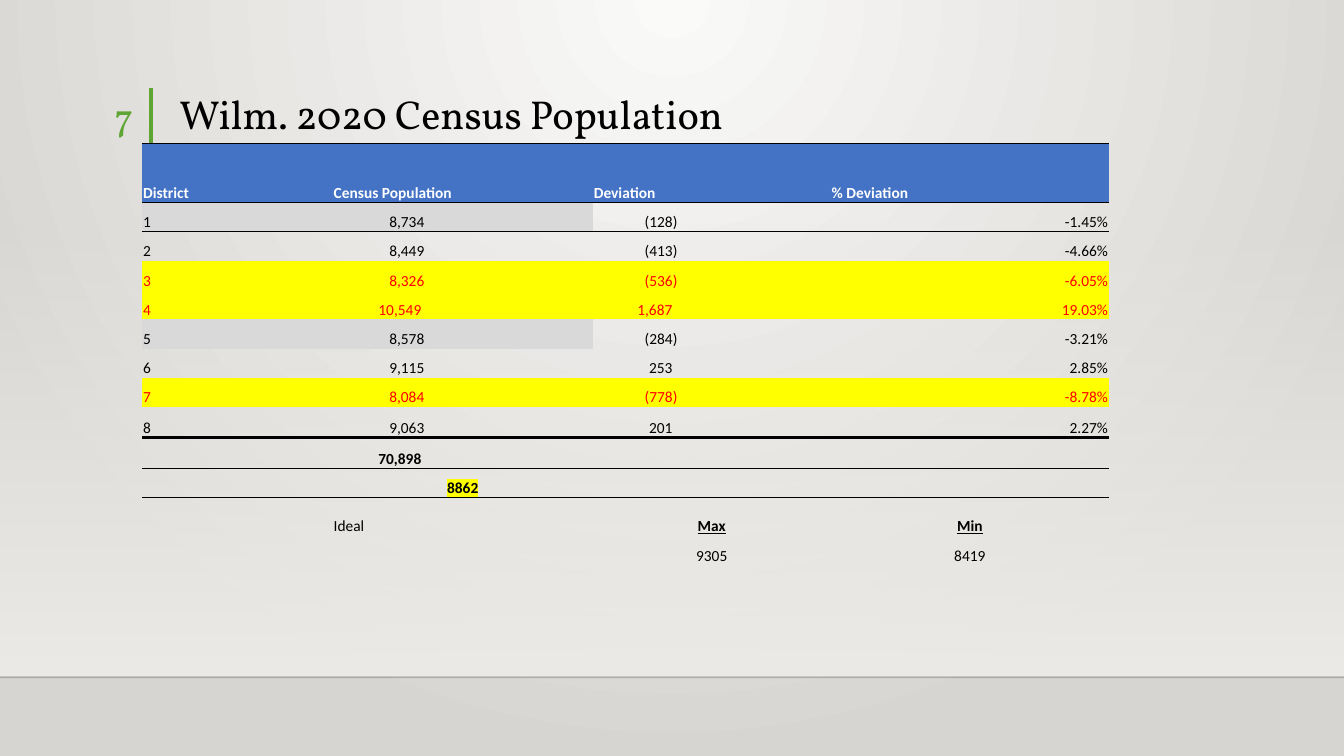
from lxml import etree
from pptx import Presentation
from pptx import util as u
from pptx.dml.color import RGBColor
from pptx.enum import shapes, text
from pptx.oxml import parse_xml
from pptx.oxml.ns import nsdecls, qn

# Content
TITLE = "Wilm. 2020 Census Population"
NUMBER = "7"
HEADER = ["District", "Census Population", "Deviation", "% Deviation"]
DISTRICTS = [
    ("1", "8,734", "(128)", "-1.45%"),
    ("2", "8,449", "(413)", "-4.66%"),
    ("3", "8,326", "(536)", "-6.05%"),
    ("4", "10,549", "1,687", "19.03%"),
    ("5", "8,578", "(284)", "-3.21%"),
    ("6", "9,115", "253", "2.85%"),
    ("7", "8,084", "(778)", "-8.78%"),
    ("8", "9,063", "201", "2.27%"),
]
SUMMARY = [
    ("", "70,898", "", ""),
    ("", "8862", "", ""),
    ("", "Ideal", "Max", "Min"),
    ("", "", "9305", "8419"),
]
OUTLIERS = {3, 4, 7}
SHADED = {1, 5}
RULES = {0: 1, 1: 1, 9: 2, 10: 1}  # row edge: line width in points

# Look
BLACK = RGBColor(0, 0, 0)
WHITE = RGBColor(255, 255, 255)
RED = RGBColor(255, 0, 0)
YELLOW = RGBColor(255, 255, 0)
BLUE = RGBColor(0x44, 0x72, 0xC4)
GREY = RGBColor(0xD9, 0xD9, 0xD9)
GREEN = RGBColor(0x5F, 0xA5, 0x34)
GLOW = RGBColor(0xFA, 0xFA, 0xF9)
STONE = RGBColor(0xD7, 0xD5, 0xD2)
SAND = RGBColor(0xED, 0xEB, 0xE7)
LEFT, CENTER, RIGHT = text.PP_ALIGN.LEFT, text.PP_ALIGN.CENTER, text.PP_ALIGN.RIGHT

# Grid, in inches
WIDTH, HEIGHT = 13.33, 7.5
COLUMNS = [1.89, 2.58, 2.36, 2.76]
ROWS = [0.59] + [0.29] * 7 + [0.3, 0.31, 0.29, 0.38, 0.29]
TABLE_LEFT, TABLE_TOP = 1.41, 1.42
FLOOR = 6.72


def write(frame, words, size=11, font="Calibri", color=BLACK, bold=False,
          underline=False, align=LEFT, highlight=None, spacing=None):
    para = frame.paragraphs[0]
    para.alignment = align
    if spacing:
        para.line_spacing = spacing
    if not words:
        end = etree.SubElement(para._p, qn("a:endParaRPr"))
        end.set("sz", str(size * 100))
        return
    span = para.add_run()
    span.text = words
    span.font.size, span.font.name = u.Pt(size), font
    span.font.bold, span.font.underline = bold, underline
    span.font.color.rgb = color
    if highlight:
        mark = parse_xml(f'<a:highlight {nsdecls("a")}><a:srgbClr val="{highlight}"/></a:highlight>')
        span.font._element.find(qn("a:solidFill")).addnext(mark)


def add_text(page, left, top, width, height, words, anchor, **style):
    box = page.shapes.add_textbox(*map(u.Inches, (left, top, width, height)))
    box.text_frame.word_wrap = True
    box.text_frame.vertical_anchor = anchor
    write(box.text_frame, words, font="Vollkorn", **style)


def set_gradient(fill, owner, start, end, direction, start_alpha=100):
    fill.gradient()
    old = owner.find(".//" + qn("a:gradFill"))
    new = parse_xml(
        f'<a:gradFill {nsdecls("a")} rotWithShape="1"><a:gsLst>'
        f'<a:gs pos="0"><a:srgbClr val="{start}"><a:alpha val="{start_alpha * 1000}"/></a:srgbClr></a:gs>'
        f'<a:gs pos="100000"><a:srgbClr val="{end}"/></a:gs></a:gsLst>{direction}</a:gradFill>')
    old.getparent().replace(old, new)


def add_line(page, start, end, color, width, alpha=100):
    line = page.shapes.add_connector(shapes.MSO_CONNECTOR.STRAIGHT, *map(u.Inches, start + end))
    line.line.color.rgb, line.line.width = color, u.Pt(width)
    etree.SubElement(line._element.spPr, qn("a:effectLst"))
    if alpha < 100:
        tint = line._element.spPr.find(".//" + qn("a:srgbClr"))
        etree.SubElement(tint, qn("a:alpha")).set("val", str(alpha * 1000))


def cell_format(row, column, words):
    """Return text format, fill colour and right margin of a table cell."""
    if row == 0:
        return dict(color=WHITE, bold=True), BLUE, 0.01
    if row > len(DISTRICTS):
        style = dict(bold=words in ("70,898", "8862", "Max", "Min"),
                     underline=words in ("Max", "Min"),
                     align=LEFT if words == "Ideal" else CENTER)
        if words == "8862":
            style["highlight"] = YELLOW
        if words == "70,898":
            return style | dict(align=RIGHT), None, 1.7
        return style, None, 0.01
    style = dict(color=RED if row in OUTLIERS else BLACK, align=RIGHT if column else LEFT)
    fill = YELLOW if row in OUTLIERS else GREY if row in SHADED and column < 2 else None
    margin = 0.01
    if column == 1:
        margin = 1.7 if len(words) > 5 else 1.67
    elif column == 2:
        margin = 1.52 if words.startswith("(") else 1.57
    return style, fill, margin


def add_rules(cell, row):
    for tag, edge in (("lnB", row + 1), ("lnT", row)):
        if edge in RULES:
            cell._tc.get_or_add_tcPr().insert(0, parse_xml(
                f'<a:{tag} {nsdecls("a")} w="{u.Pt(RULES[edge])}"><a:solidFill>'
                f'<a:srgbClr val="{BLACK}"/></a:solidFill></a:{tag}>'))


def add_population_table(page):
    frame = page.shapes.add_table(len(ROWS), len(COLUMNS), *map(
        u.Inches, (TABLE_LEFT, TABLE_TOP, sum(COLUMNS), sum(ROWS))))
    table = frame.table
    table.first_row = table.horz_banding = False
    style_id = frame._element.find(".//" + qn("a:tableStyleId"))
    style_id.text = "{2D5ABB26-0587-4C30-8999-92F81FD0307C}"
    for column, width in zip(table.columns, COLUMNS):
        column.width = u.Inches(width)
    for r, values in enumerate([HEADER] + DISTRICTS + SUMMARY):
        table.rows[r].height = u.Inches(ROWS[r])
        for c, words in enumerate(values):
            cell = table.cell(r, c)
            style, fill, margin = cell_format(r, c, words)
            cell.vertical_anchor = text.MSO_ANCHOR.BOTTOM
            cell.margin_left = cell.margin_top = u.Inches(0.01)
            cell.margin_right, cell.margin_bottom = u.Inches(margin), 0
            write(cell.text_frame, words, **style)
            if fill is None:
                cell.fill.background()
            else:
                cell.fill.solid()
                cell.fill.fore_color.rgb = fill
            add_rules(cell, r)


def main():
    deck = Presentation()
    deck.slide_width, deck.slide_height = u.Inches(WIDTH), u.Inches(HEIGHT)
    page = deck.slides.add_slide(deck.slide_layouts[6])

    # Backdrop: glow from the top, soft wall and floor line
    set_gradient(page.background.fill, page._element, GLOW, STONE,
                 '<a:path path="circle"><a:fillToRect l="43000" r="43000" b="100000"/></a:path>')
    wall = page.shapes.add_shape(shapes.MSO_SHAPE.RECTANGLE, *map(u.Inches, (0, 2.2, WIDTH, 4.5)))
    wall.shadow.inherit = False
    wall.line.fill.background()
    set_gradient(wall.fill, wall._element, SAND, SAND, '<a:lin ang="5400000" scaled="0"/>', start_alpha=0)
    add_line(page, (0, FLOOR), (WIDTH, FLOOR), BLACK, 1, alpha=20)

    # Heading and table
    add_line(page, (1.5, 0.87), (1.5, 2.04), GREEN, 3)
    add_text(page, 1.68, 0.88, 10.41, 0.54, TITLE, text.MSO_ANCHOR.BOTTOM, size=28.8, spacing=0.9)
    add_population_table(page)
    add_text(page, 0.53, 0.87, 0.89, 0.55, NUMBER, text.MSO_ANCHOR.TOP, size=28, color=GREEN, align=RIGHT)
    deck.save("out.pptx")


if __name__ == "__main__":
    main()
